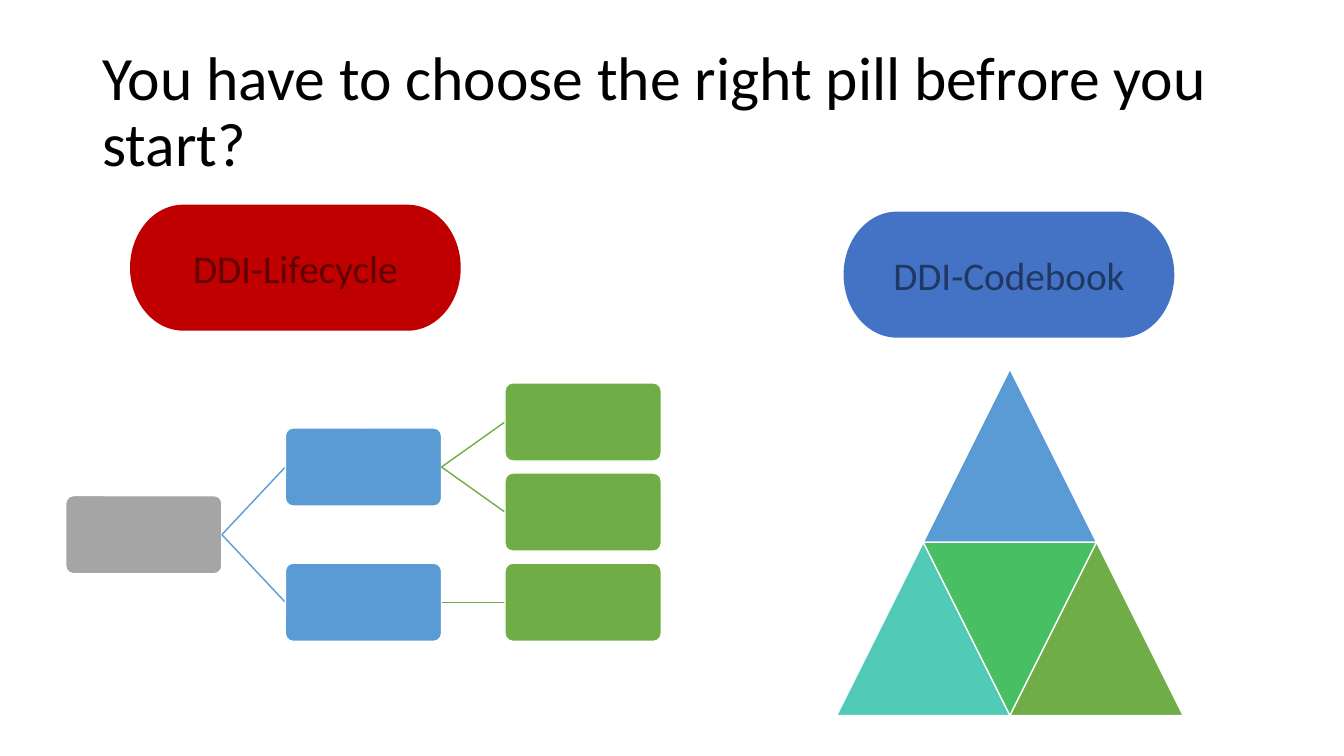
"""Build a slide that contrasts DDI-Lifecycle and DDI-Codebook."""
from dataclasses import dataclass

from lxml.etree import SubElement
from pptx import Presentation
from pptx.dml.color import RGBColor
from pptx.enum.shapes import MSO_CONNECTOR as Connector
from pptx.enum.shapes import MSO_SHAPE as Preset
from pptx.enum.text import MSO_ANCHOR as Anchor
from pptx.enum.text import PP_ALIGN as Align
from pptx.oxml.ns import qn
from pptx.shapes.autoshape import Shape
from pptx.slide import Slide
from pptx.text.text import TextFrame
from pptx.util import Pt

COLOURS = {
    "black": "000000", "white": "FFFFFF", "red": "C00000", "dark_red": "600000",
    "blue": "4472C4", "navy": "203864", "sky": "5B9BD5", "grey": "A5A5A5",
    "teal": "52CAB8", "emerald": "49BF64", "green": "70AD47",
}
PILL_SIZE = (236.2, 90)
TRIANGLE_SIDE = 123.8
PYRAMID_LEFT, PYRAMID_TOP = 597.6, 263.5
NODE_WIDTH, NODE_HEIGHT = 111.6, 55.8
TREE_LEFT, TREE_TOP = 46.9, 273.5
LEVEL_STEP, ROW_STEP = 156.9, 64.4


@dataclass(frozen=True)
class Pill:
    """A labelled choice."""
    label: str
    left: float
    top: float
    fill: str
    ink: str


@dataclass(frozen=True)
class Triangle:
    """A pyramid part, placed in half sides across and whole sides down."""
    column: int
    row: int
    fill: str
    rotation: float = 0


@dataclass(frozen=True)
class Node:
    """A tree box with its level, row and parent."""
    level: int
    row: float
    fill: str
    parent: "Node | None" = None

    @property
    def left(self) -> float:
        """Return the left edge."""
        return TREE_LEFT + self.level * LEVEL_STEP

    @property
    def top(self) -> float:
        """Return the top edge."""
        return TREE_TOP + self.row * ROW_STEP

    @property
    def middle(self) -> float:
        """Return the vertical centre."""
        return self.top + NODE_HEIGHT / 2


PILLS = (
    Pill("DDI-Lifecycle", 92.9, 146.2, "red", "dark_red"),
    Pill("DDI-Codebook", 602.6, 151.2, "blue", "navy"),
)
TRIANGLES = (
    Triangle(1, 0, "sky"),
    Triangle(0, 1, "teal"),
    Triangle(1, 1, "emerald", 180),
    Triangle(2, 1, "green"),
)
ROOT = Node(0, 1.25, "grey")
UPPER = Node(1, 0.5, "sky", ROOT)
LOWER = Node(1, 2, "sky", ROOT)
LEAVES = tuple(
    Node(2, row, "green", parent) for row, parent in enumerate((UPPER, UPPER, LOWER))
)
NODES = (ROOT, UPPER, LOWER, *LEAVES)


def colour(name: str) -> RGBColor:
    """Look up a named colour."""
    return RGBColor.from_string(COLOURS[name])


def write(frame: TextFrame, text: str, size: float, ink: str, **layout: object) -> None:
    """Put one formatted paragraph into a text frame."""
    frame.word_wrap = True
    frame.vertical_anchor = Anchor.MIDDLE
    para = frame.paragraphs[0]
    for name, value in layout.items():
        setattr(para, name, value)
    span = para.add_run()
    span.text = text
    for name, value in {"name": "Calibri", "size": Pt(size)}.items():
        setattr(span.font, name, value)
    span.font.color.rgb = colour(ink)


def add_filled(page: Slide, preset: Preset, left: float, top: float,
               width: float, height: float, fill: str, outlined: bool = True) -> Shape:
    """Add a flat shape, with a thin white outline if wanted."""
    shape = page.shapes.add_shape(preset, Pt(left), Pt(top), Pt(width), Pt(height))
    shape.shadow.inherit = False
    shape.fill.solid()
    shape.fill.fore_color.rgb = colour(fill)
    if outlined:
        shape.line.color.rgb = colour("white")
        shape.line.width = Pt(1)
    else:
        shape.line.fill.background()
    return shape


def draw_title(page: Slide) -> None:
    """Draw the heading."""
    box = page.shapes.add_textbox(Pt(66), Pt(28.8), Pt(828), Pt(104.4))
    write(box.text_frame, "You have to choose the right pill befrore you start?",
          44, "black", line_spacing=0.9)


def draw_pill(page: Slide, pill: Pill) -> None:
    """Draw one labelled pill."""
    shape = add_filled(page, Preset.FLOWCHART_TERMINATOR, pill.left, pill.top,
                       *PILL_SIZE, pill.fill, outlined=False)
    write(shape.text_frame, pill.label, 28, pill.ink, alignment=Align.CENTER)


def draw_triangle(page: Slide, triangle: Triangle) -> None:
    """Draw one part of the pyramid."""
    shape = add_filled(page, Preset.ISOSCELES_TRIANGLE,
                       PYRAMID_LEFT + triangle.column * TRIANGLE_SIDE / 2,
                       PYRAMID_TOP + triangle.row * TRIANGLE_SIDE,
                       TRIANGLE_SIDE, TRIANGLE_SIDE, triangle.fill)
    shape.rotation = triangle.rotation


def draw_node(page: Slide, node: Node) -> None:
    """Draw a tree box and the line from its parent."""
    if node.parent:
        line = page.shapes.add_connector(
            Connector.STRAIGHT, Pt(node.parent.left + NODE_WIDTH),
            Pt(node.parent.middle), Pt(node.left), Pt(node.middle))
        line.line.color.rgb = colour(node.fill)
        line.line.width = Pt(1)
        SubElement(line._element.spPr, qn("a:effectLst"))
    shape = add_filled(page, Preset.ROUNDED_RECTANGLE, node.left, node.top,
                       NODE_WIDTH, NODE_HEIGHT, node.fill)
    shape.adjustments[0] = 0.1


def main() -> None:
    """Build and save the deck."""
    deck = Presentation()
    deck.slide_width, deck.slide_height = Pt(960), Pt(540)
    page = deck.slides.add_slide(deck.slide_layouts[6])
    draw_title(page)
    for pill in PILLS:
        draw_pill(page, pill)
    for triangle in TRIANGLES:
        draw_triangle(page, triangle)
    for node in NODES:
        draw_node(page, node)
    deck.save("out.pptx")


if __name__ == "__main__":
    main()
